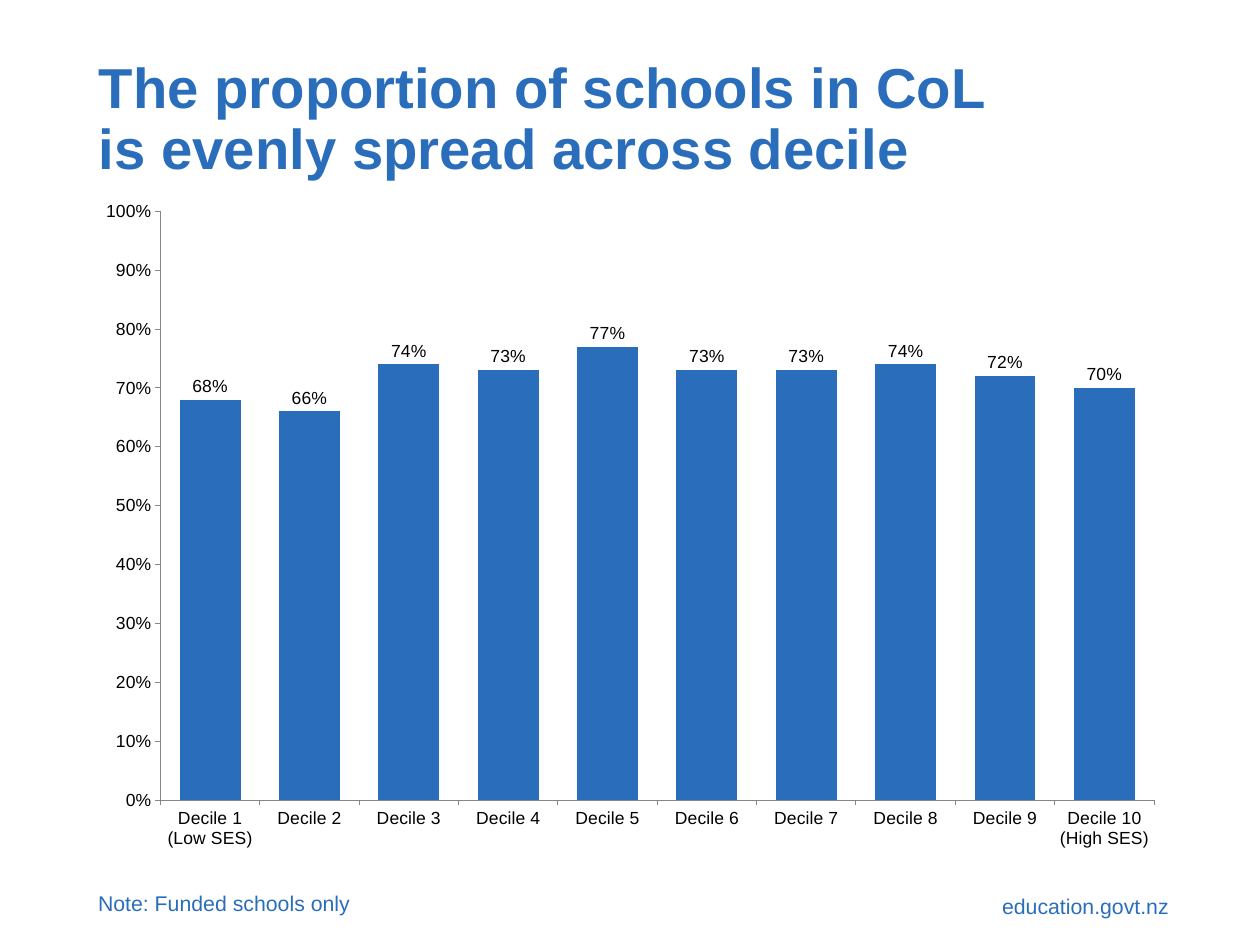
from lxml import etree
from pptx import Presentation
from pptx.chart.data import CategoryChartData
from pptx.dml.color import RGBColor
from pptx.enum.chart import XL_CHART_TYPE, XL_LABEL_POSITION, XL_TICK_MARK
from pptx.enum.text import MSO_ANCHOR, PP_ALIGN
from pptx.oxml import parse_xml
from pptx.oxml.ns import nsdecls
from pptx.util import Emu, Pt

PX = 914400 // 90
FONT = "Arial"
BLUE = RGBColor(0x2A, 0x6E, 0xBB)
BLACK = RGBColor(0, 0, 0)
GREY = RGBColor(0x86, 0x86, 0x86)
LEFT, RIGHT = PP_ALIGN.LEFT, PP_ALIGN.RIGHT
TOP, MIDDLE = MSO_ANCHOR.TOP, MSO_ANCHOR.MIDDLE
COLUMNS = XL_CHART_TYPE.COLUMN_CLUSTERED
OUTSIDE_END = XL_LABEL_POSITION.OUTSIDE_END
TICK_OUTSIDE = XL_TICK_MARK.OUTSIDE

SHARES = [0.68, 0.66, 0.74, 0.73, 0.77, 0.73, 0.73, 0.74, 0.72, 0.70]
RANGE_ENDS = {1: " (Low SES)", 10: " (High SES)"}
PLOT_AREA = {"x": 0.07, "y": 0.03, "w": 0.91, "h": 0.87}


def px(*lengths):
    return [Emu(length * PX) for length in lengths]


def add_text(page, place, text, size, align=LEFT, anchor=TOP, bold=False, spacing=1.0):
    box = page.shapes.add_textbox(*px(*place))
    frame = box.text_frame
    frame.word_wrap = True
    frame.vertical_anchor = anchor
    frame.margin_left, frame.margin_right = px(13, 13)
    frame.margin_top, frame.margin_bottom = px(6, 6)
    frame.text = text
    para = frame.paragraphs[0]
    para.alignment = align
    para.line_spacing = spacing
    font = para.runs[0].font
    font.name, font.size, font.bold = FONT, Pt(size), bold
    font.color.rgb = BLUE


def style_axis(axis):
    axis.has_major_gridlines = False
    axis.major_tick_mark = TICK_OUTSIDE
    axis.minor_tick_mark = XL_TICK_MARK.NONE
    axis.format.line.color.rgb = GREY
    axis.format.line.width = Pt(0.75)


def fix_plot_area(chart):
    """Place the inner plot area at fixed fractions of the chart."""
    layout = parse_xml(f"<c:layout {nsdecls('c')}><c:manualLayout/></c:layout>")
    settings = {"layoutTarget": "inner", "xMode": "edge", "yMode": "edge", **PLOT_AREA}
    for name, value in settings.items():
        tag = etree.QName(layout.nsmap["c"], name)
        etree.SubElement(layout[0], tag).set("val", str(value))
    plot_area = chart.plots[0]._element.getparent()
    for old in plot_area.findall(etree.QName(layout.nsmap["c"], "layout")):
        plot_area.remove(old)
    plot_area.insert(0, layout)


def add_decile_chart(page, place):
    data = CategoryChartData(number_format="0%")
    data.categories = [f"Decile {n}{RANGE_ENDS.get(n, '')}"
                       for n in range(1, len(SHARES) + 1)]
    data.add_series("Series 1", SHARES)
    chart = page.shapes.add_chart(COLUMNS, *px(*place), data).chart
    chart.has_legend = False
    chart.has_title = False
    chart.font.name, chart.font.size = FONT, Pt(14)
    chart.font.color.rgb = BLACK

    style_axis(chart.category_axis)
    scale = chart.value_axis
    style_axis(scale)
    scale.minimum_scale, scale.maximum_scale, scale.major_unit = 0, 1, 0.1
    scale.tick_labels.number_format = "0%"
    scale.tick_labels.number_format_is_linked = False

    plot = chart.plots[0]
    plot.gap_width = 63
    plot.vary_by_categories = False
    bars = plot.series[0]
    bars.format.fill.solid()
    bars.format.fill.fore_color.rgb = BLUE
    labels = bars.data_labels
    labels.show_value = True
    labels.number_format = "0%"
    labels.number_format_is_linked = False
    labels.position = OUTSIDE_END
    fix_plot_area(chart)


def main():
    deck = Presentation()
    deck.slide_width, deck.slide_height = px(1260, 945)
    page = deck.slides.add_slide(deck.slide_layouts[6])
    add_text(page, (896, 887, 286, 38), "education.govt.nz", 17, align=RIGHT)
    add_text(page, (85, 884, 904, 38), "Note: Funded schools only", 17)
    add_text(page, (86, 50, 938, 142),
             "The proportion of schools in CoL is evenly spread across decile",
             45, anchor=MIDDLE, bold=True, spacing=0.9)
    add_decile_chart(page, (84, 191, 1092, 677))
    deck.save("out.pptx")


if __name__ == "__main__":
    main()
